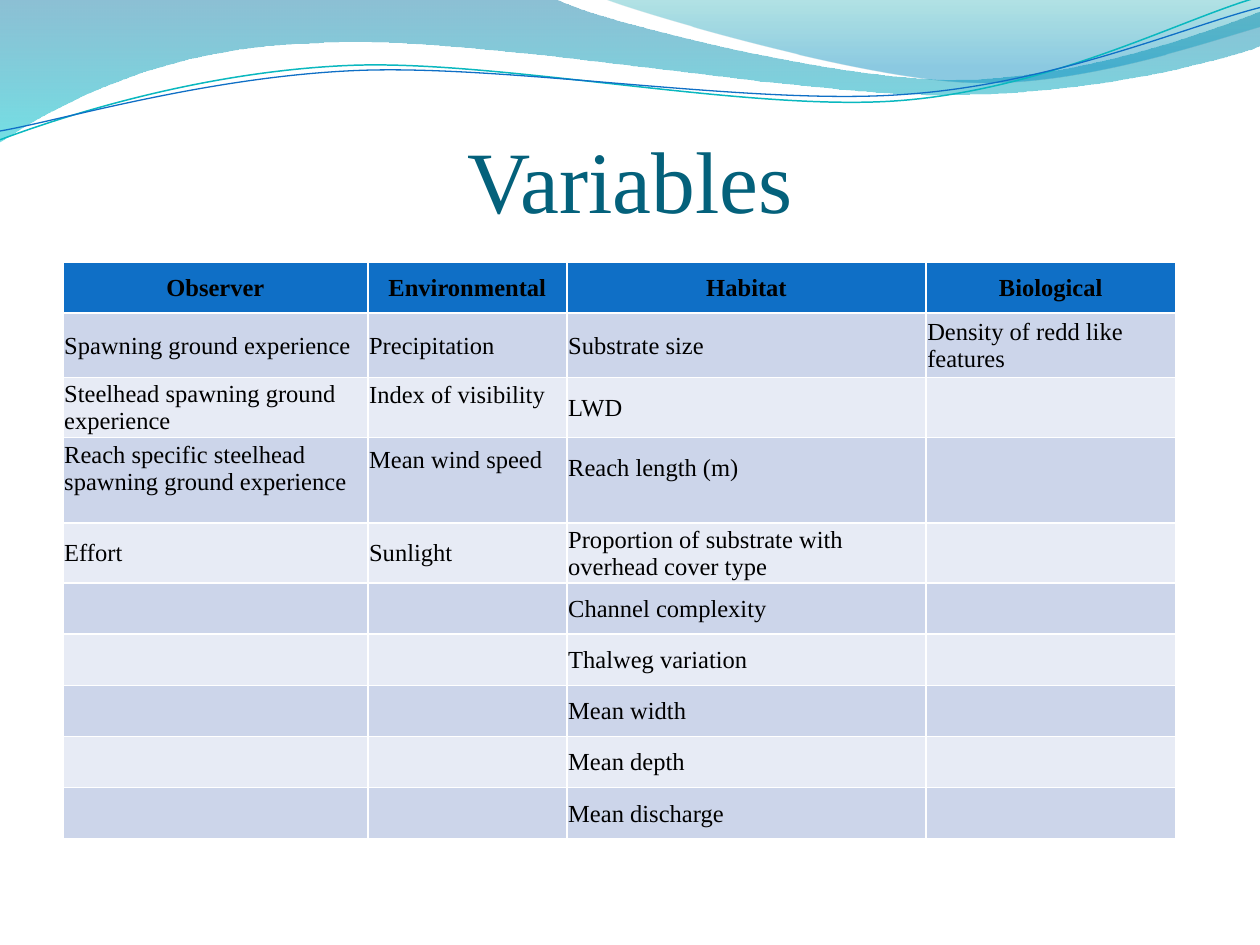
"""Builds the Variables slide: a wave banner, a title and a table of survey variables."""
from dataclasses import dataclass
from typing import Optional

from lxml.etree import Element, SubElement
from pptx import Presentation
from pptx.dml.color import RGBColor
from pptx.enum.text import MSO_ANCHOR as Anchor, PP_ALIGN as Align
from pptx.oxml.ns import qn
from pptx.util import Inches, Pt

COLORS = {
    "title": "04617B", "text": "000000", "header": "0F6FC6",
    "odd": "CCD5EA", "even": "E7EBF5", "teal line": "0AB8BF", "blue line": "0F6FC6",
    "deep blue": "0074A1", "turquoise": "00C6CF", "sea green": "00A1A9", "azure": "008BBF",
}
FONT = "Times New Roman"


@dataclass(frozen=True)
class Stop:
    position: float
    color: str
    opacity: int


@dataclass(frozen=True)
class Wave:
    start: tuple
    segments: tuple
    stops: tuple = ()
    line: Optional[str] = None
    width: float = 0


WAVES = (
    Wave((0, 0), (
        (4.4, -0.01),
        (4.76, 0.17, 6.64, 0.63, 7.58, 0.63), (8.53, 0.63, 9.58, 0.26, 10, 0.09),
        (10.01, 0.36),
        (9.83, 0.44, 8.7, 0.76, 7.46, 0.75), (6.22, 0.75, 3.82, 0.28, 2.57, 0.34),
        (1.29, 0.36, 0.46, 0.83, -0.01, 1.13),
    ), (Stop(0, "deep blue", 45), Stop(1, "turquoise", 55))),
    Wave((4.79, -0.01), (
        (5.09, 0.11, 6.82, 0.62, 7.69, 0.65), (8.56, 0.69, 9.61, 0.32, 10, 0.21),
        (10, 0),
    ), (Stop(0, "sea green", 30), Stop(0.8, "azure", 45))),
    Wave((0, 1.11), (
        (0.48, 0.93, 1.58, 0.57, 2.77, 0.52), (3.95, 0.47, 5.93, 0.89, 7.13, 0.8),
        (8.33, 0.71, 9.38, 0.15, 9.98, -0.02),
    ), line="teal line", width=0.85),
    Wave((0, 1.04), (
        (0.47, 0.96, 1.64, 0.61, 2.83, 0.56), (4.03, 0.51, 5.97, 0.84, 7.17, 0.75),
        (8.36, 0.67, 9.41, 0.21, 10, 0.06),
    ), line="blue line", width=0.75),
)

COLUMNS = {
    "Observer": (2.42, (
        "Spawning ground experience", "Steelhead spawning ground experience",
        "Reach specific steelhead spawning ground experience", "Effort")),
    "Environmental": (1.58, (
        "Precipitation", "Index of visibility", "Mean wind speed", "Sunlight")),
    "Habitat": (2.85, (
        "Substrate size", "LWD", "Reach length (m)",
        "Proportion of substrate with overhead cover type", "Channel complexity",
        "Thalweg variation", "Mean width", "Mean depth", "Mean discharge")),
    "Biological": (1.98, ("Density of redd like features",)),
}
PLAIN_ROW = 2.03 / 5
ROW_HEIGHTS = (PLAIN_ROW, 0.51, 0.44, 0.66, 0.44) + (PLAIN_ROW,) * 5
BOTTOM_MARGINS = {
    "Index of visibility": 0.2, "Mean wind speed": 0.33, "Reach length (m)": 0.2,
    "Reach specific steelhead spawning ground experience": 0.2,
}


def rgb(name: str) -> RGBColor:
    return RGBColor.from_string(COLORS[name])


def bend_segments(shape, segments: tuple) -> None:
    for node, segment in zip(list(shape._element.iter(qn("a:lnTo"))), segments):
        if len(segment) == 2:
            continue
        curve = Element(qn("a:cubicBezTo"))
        for x, y in zip(segment[::2], segment[1::2]):
            SubElement(curve, qn("a:pt"), x=str(Inches(x) - shape.left),
                       y=str(Inches(y) - shape.top))
        node.getparent().replace(node, curve)


def draw_wave(page, wave: Wave) -> None:
    ends = [(Inches(s[-2]), Inches(s[-1])) for s in (wave.start, *wave.segments)]
    builder = page.shapes.build_freeform(*ends[0])
    builder.add_line_segments(ends[1:], close=bool(wave.stops))
    shape = builder.convert_to_shape()
    bend_segments(shape, wave.segments)
    shape.shadow.inherit = False
    if wave.line:
        shape.fill.background()
        shape.line.color.rgb = rgb(wave.line)
        shape.line.width = Pt(wave.width)
        return
    shape.line.fill.background()
    shape.fill.gradient()
    shape.fill.gradient_angle = 270
    for target, stop in zip(shape.fill.gradient_stops, wave.stops):
        target.position = stop.position
        target.color.rgb = rgb(stop.color)
    for color, stop in zip(shape._element.iter(qn("a:srgbClr")), wave.stops):
        SubElement(color, qn("a:alpha"), val=str(stop.opacity * 1000))


def set_font(para, size: float, color: str, bold: bool = False) -> None:
    para.font.name = FONT
    para.font.size = Pt(size)
    para.font.bold = bold
    para.font.color.rgb = rgb(color)


def draw_title(page, text: str) -> None:
    box = page.shapes.add_textbox(Inches(0.5), Inches(0.77), Inches(9), Inches(1.06))
    frame = box.text_frame
    frame.word_wrap = True
    frame.vertical_anchor = Anchor.BOTTOM
    frame.margin_left = frame.margin_right = frame.margin_bottom = 0
    para = frame.paragraphs[0]
    para.text = text
    para.alignment = Align.CENTER
    set_font(para, 50, "title")


def write_cell(cell, text: str, header: bool) -> None:
    cell.vertical_anchor = Anchor.MIDDLE
    cell.margin_left = cell.margin_right = cell.margin_top = Inches(0.01)
    cell.margin_bottom = Inches(BOTTOM_MARGINS.get(text, 0))
    para = cell.text_frame.paragraphs[0]
    para.text = text
    para.alignment = Align.CENTER if header else Align.LEFT
    set_font(para, 14, "text", header)


def draw_table(page) -> None:
    width = sum(column_width for column_width, _ in COLUMNS.values())
    table = page.shapes.add_table(
        len(ROW_HEIGHTS), len(COLUMNS), Inches(0.5), Inches(2.08),
        Inches(width), Inches(sum(ROW_HEIGHTS))).table
    for row, height in zip(table.rows, ROW_HEIGHTS):
        row.height = Inches(height)
    for column, (heading, (column_width, variables)) in enumerate(COLUMNS.items()):
        table.columns[column].width = Inches(column_width)
        texts = (heading, *variables)
        for row in range(len(ROW_HEIGHTS)):
            cell = table.cell(row, column)
            band = "odd" if row % 2 else "even"
            cell.fill.solid()
            cell.fill.fore_color.rgb = rgb(band if row else "header")
            if row < len(texts):
                write_cell(cell, texts[row], row == 0)


def main() -> None:
    deck = Presentation()
    deck.slide_width, deck.slide_height = Inches(10), Inches(7.5)
    page = deck.slides.add_slide(deck.slide_layouts[6])
    for wave in WAVES:
        draw_wave(page, wave)
    draw_title(page, "Variables")
    draw_table(page)
    deck.save("out.pptx")


if __name__ == "__main__":
    main()
